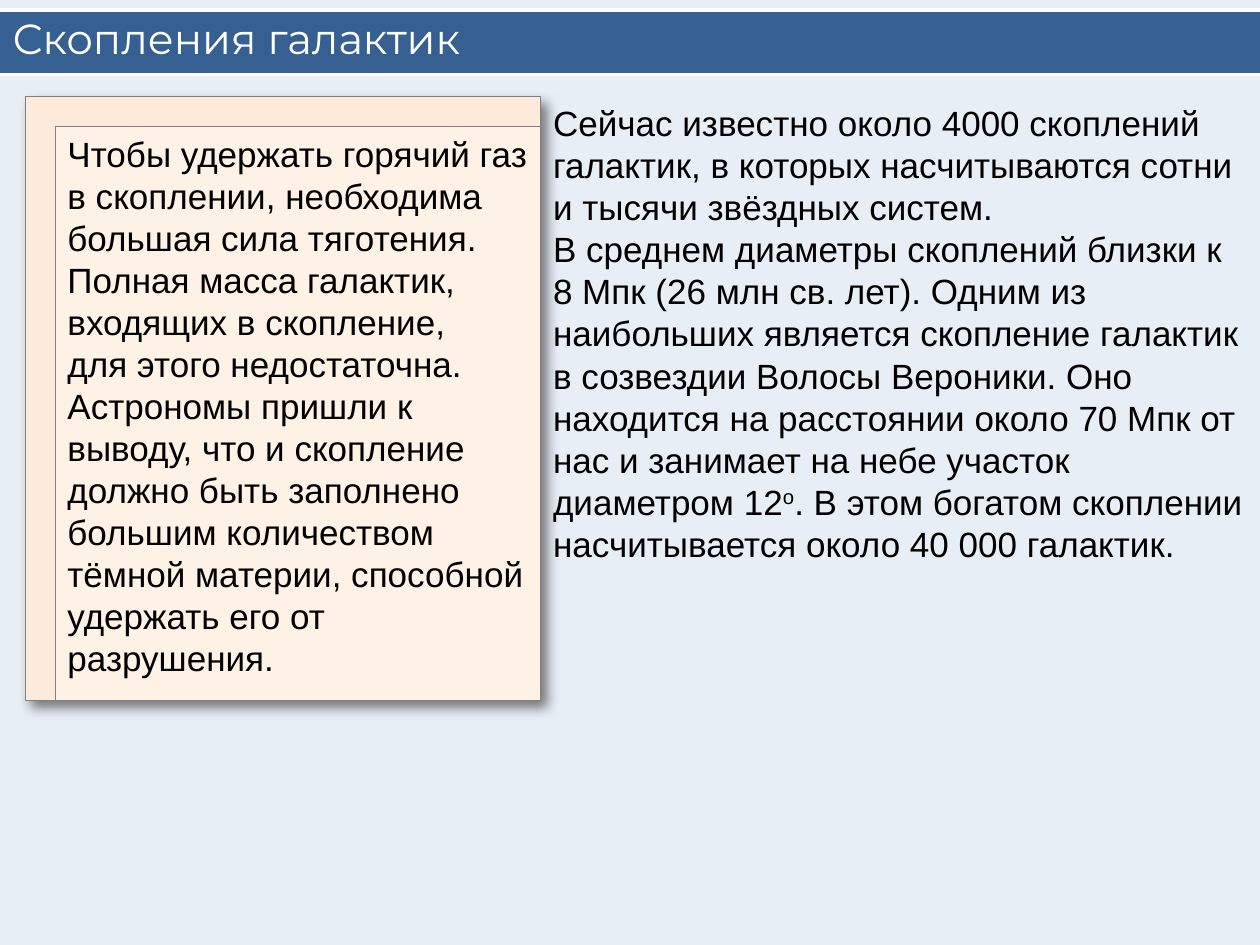
from lxml import etree
from pptx import Presentation
from pptx import util as u
from pptx.dml.color import RGBColor
from pptx.enum import shapes, text
from pptx.oxml import ns

COLORS = {
    "background": "E8EEF6",
    "band": "376092",
    "white": "FFFFFF",
    "black": "000000",
    "card": "FDEADA",
    "panel": "FEF1E6",
    "border": "808080",
}
TITLE = "Скопления галактик"
CLUSTERS = [
    ["Сейчас известно около 4000 скоплений галактик, в которых насчитываются "
     "сотни и тысячи звёздных систем."],
    ["В среднем диаметры скоплений близки к 8 Мпк (26 млн св. лет). Одним из "
     "наибольших является скопление галактик в созвездии Волосы Вероники. Оно "
     "находится на расстоянии около 70 Мпк от нас и занимает на небе участок "
     "диаметром 12", "о", ". В этом богатом скоплении насчитывается около 40 000 галактик."],
]
DARK_MATTER = [
    ["Чтобы удержать горячий газ в скоплении, необходима большая сила тяготения. "
     "Полная масса галактик, входящих в скопление,"],
    ["для этого недостаточна. Астрономы пришли к выводу, что и скопление должно "
     "быть заполнено"],
    ["большим количеством тёмной материи, способной удержать его от разрушения."],
]


def rgb(name):
    return RGBColor.from_string(COLORS[name])


def style_font(font, name, size, color):
    font.name = name
    font.size = u.Pt(size)
    font.color.rgb = rgb(color)


def write_paragraphs(tf, paragraphs):
    tf.word_wrap = True
    for i, parts in enumerate(paragraphs):
        p = tf.paragraphs[0] if i == 0 else tf.add_paragraph()
        p.alignment = text.PP_ALIGN.LEFT
        style_font(p.font, "Arial", 20, "black")
        for j, part in enumerate(parts):
            r = p.add_run()
            r.text = part
            if j == 1:
                r._r.get_or_add_rPr().set("baseline", "30000")


def add_rect(parent, x, y, w, h, fill, border=None):
    sp = parent.shapes.add_shape(
        shapes.MSO_SHAPE.RECTANGLE, u.Cm(x), u.Cm(y), u.Cm(w), u.Cm(h))
    sp.shadow.inherit = False
    sp.fill.solid()
    sp.fill.fore_color.rgb = rgb(fill)
    if border:
        sp.line.color.rgb = rgb(border)
        sp.line.width = u.Pt(0.5)
    else:
        sp.line.fill.background()
    return sp


def add_drop_shadow(sp):
    effects = sp._element.spPr.find(ns.qn("a:effectLst"))
    shadow = etree.SubElement(
        effects, ns.qn("a:outerShdw"), blurRad=str(u.Pt(7)), dist=str(u.Pt(5)),
        dir=str(45 * 60000), algn="tl", rotWithShape="0")
    color = etree.SubElement(shadow, ns.qn("a:srgbClr"), val=COLORS["black"])
    etree.SubElement(color, ns.qn("a:alpha"), val="50000")


def add_header(s, x, y, w, h):
    band = s.shapes.add_group_shape()
    add_rect(band, x, y, w, h, "band")
    for edge in (y + h, y):
        line = band.shapes.add_connector(
            shapes.MSO_CONNECTOR.STRAIGHT, u.Cm(x), u.Cm(edge), u.Cm(x + w), u.Cm(edge))
        line.line.color.rgb = rgb("white")
        line.line.width = u.Pt(2)
        etree.SubElement(line._element.spPr, ns.qn("a:effectLst"))

    title = s.shapes.title
    title.left, title.top = u.Cm(x), u.Cm(y - 0.3)
    title.width, title.height = u.Cm(w), u.Cm(h + 0.4)
    tf = title.text_frame
    tf.text = TITLE
    tf.vertical_anchor = text.MSO_ANCHOR.MIDDLE
    p = tf.paragraphs[0]
    p.alignment = text.PP_ALIGN.LEFT
    style_font(p.font, "Montserrat", 24, "white")
    s.shapes._spTree.append(title._element)


def add_clusters_text(s, x, y, w, h):
    tf = s.shapes.add_textbox(u.Cm(x), u.Cm(y), u.Cm(w), u.Cm(h)).text_frame
    write_paragraphs(tf, CLUSTERS)
    tf.auto_size = text.MSO_AUTO_SIZE.SHAPE_TO_FIT_TEXT


def add_dark_matter_card(s, x, y, w, h, margin=0.6):
    card = s.shapes.add_group_shape()
    add_drop_shadow(add_rect(card, x, y, w, h, "card", "border"))
    panel = add_rect(card, x + margin, y + margin, w - margin, h - margin, "panel", "border")
    tf = panel.text_frame
    tf.vertical_anchor = text.MSO_ANCHOR.TOP
    write_paragraphs(tf, DARK_MATTER)


def main():
    prs = Presentation()
    prs.slide_width, prs.slide_height = u.Cm(25.4), u.Cm(19.05)
    s = prs.slides.add_slide(prs.slide_layouts.get_by_name("Title Only"))
    s.background.fill.solid()
    s.background.fill.fore_color.rgb = rgb("background")
    add_header(s, 0, 0.2, 25.4, 1.3)
    add_clusters_text(s, 10.9, 1.93, 14.5, 9.65)
    add_dark_matter_card(s, 0.51, 1.95, 10.39, 12.17)
    prs.save("out.pptx")


if __name__ == "__main__":
    main()
